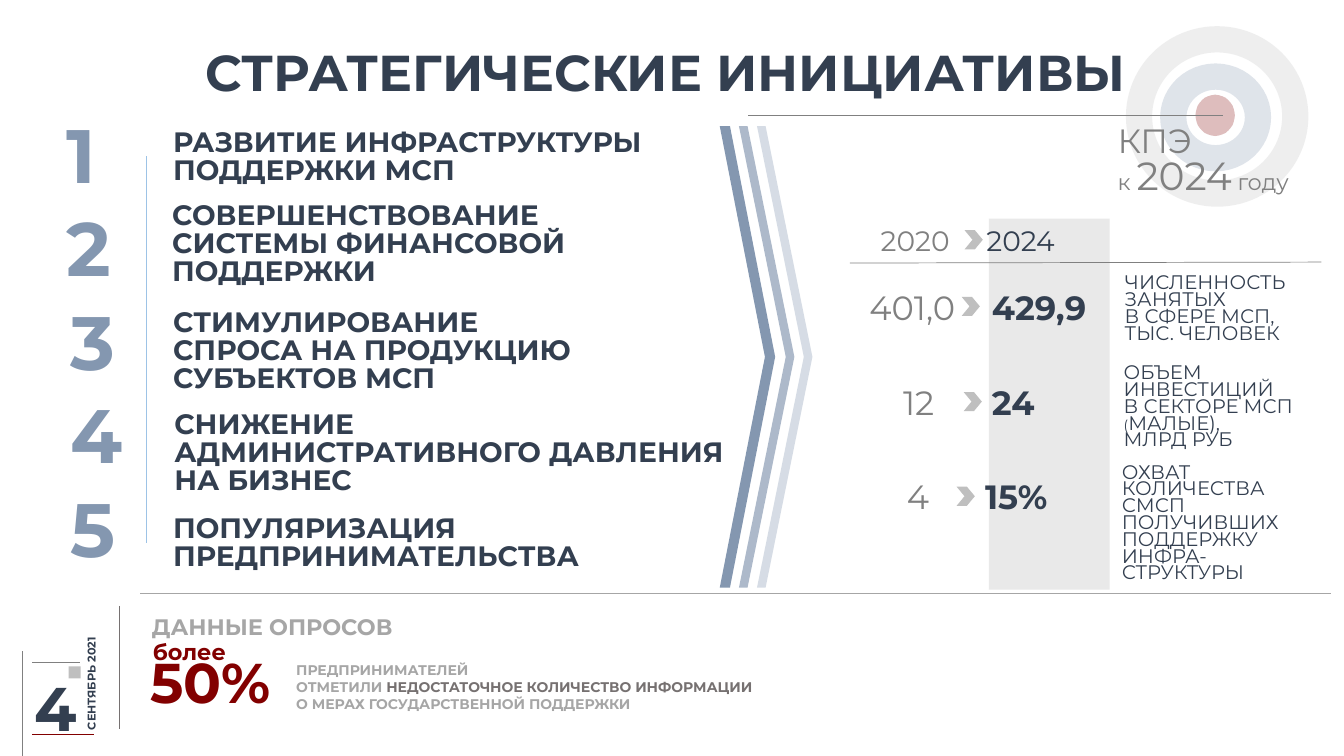
from lxml import etree
from pptx import Presentation
from pptx.dml.color import RGBColor
from pptx.enum.shapes import MSO_CONNECTOR, MSO_SHAPE
from pptx.enum.text import MSO_ANCHOR
from pptx.oxml.ns import qn
from pptx.util import Pt

TOP, MIDDLE = MSO_ANCHOR.TOP, MSO_ANCHOR.MIDDLE
RECT, OVAL, CHEVRON = MSO_SHAPE.RECTANGLE, MSO_SHAPE.OVAL, MSO_SHAPE.CHEVRON
STRAIGHT = MSO_CONNECTOR.STRAIGHT
NAVY, BLUE, GRAY, LIGHT, DARK, RED = "333F50", "8497B0", "808080", "A6A6A6", "767171", "820000"
rgb = RGBColor.from_string

prs = Presentation()
prs.slide_width, prs.slide_height = Pt(960), Pt(540)
s = prs.slides.add_slide(prs.slide_layouts[6])


def add_text(box, paragraphs, size, color, bold=False, spacing=None, anchor=MIDDLE):
    sp = s.shapes.add_textbox(*[Pt(v) for v in box])
    tf = sp.text_frame
    tf.word_wrap = True
    tf.vertical_anchor = anchor
    for i, runs in enumerate(paragraphs):
        p = tf.paragraphs[0] if i == 0 else tf.add_paragraph()
        if spacing:
            p.line_spacing = Pt(spacing)
        for words, changes in runs:
            for j, line in enumerate(words.split("\n")):
                if j:
                    p.add_line_break()
                r = p.add_run()
                r.text = line
                look = {"name": "Montserrat", "size": Pt(size), "bold": bold}
                look.update(changes)
                r.font.color.rgb = rgb(look.pop("color", color))
                for name, value in look.items():
                    setattr(r.font, name, value)
    return sp


def add_figure(kind, box, fill=None, ring=None, alpha=None, adj=None):
    sp = s.shapes.add_shape(kind, *[Pt(v) for v in box])
    sp.shadow.inherit = False
    if fill:
        sp.fill.solid()
        sp.fill.fore_color.rgb = rgb(fill)
        sp.line.fill.background()
    else:
        sp.fill.background()
        sp.line.color.rgb = rgb(ring)
        sp.line.width = Pt(18.75)
    if adj:
        sp.adjustments[0] = adj
    if alpha:
        for clr in sp._element.spPr.iter(qn("a:srgbClr")):
            etree.SubElement(clr, qn("a:alpha")).set("val", str(alpha * 1000))


add_figure(RECT, (706.3, 156.2, 86.4, 265), "D9D9D9", alpha=57)
add_figure(RECT, (49, 475.9, 8.6, 8.6), "BFBFBF")

for x, fill, adj in [(514.1, BLUE, 0.816), (527.8, "ADB9CA", 0.845), (540.7, "D6DCE5", 0.845)]:
    add_figure(CHEVRON, (x, 90, 39.6, 329.8), fill, adj=adj)

for box, color in [
    ((813.6, 28.1, 111.6, 110.2), "BFBFBF"),
    ((838.1, 54.7, 60.5, 58.3), BLUE),
    ((863.3, 77, 9.4, 10.8), RED),
]:
    add_figure(OVAL, box, ring=color, alpha=26)

for x1, y1, x2, y2, color in [
    (15.8, 465.1, 15.8, 540, GRAY),
    (56.9, 473, 23, 473, GRAY),
    (67, 524.9, 23, 524.9, RED),
    (104.4, 111.6, 104.4, 388.1, "9DC3E6"),
    (950.4, 424.1, 100.1, 424.1, LIGHT),
    (85, 432.7, 85, 520.6, DARK),
    (873.4, 82.1, 534.2, 82.1, GRAY),
    (943.9, 187.2, 607, 187.9, GRAY),
]:
    rule = s.shapes.add_connector(STRAIGHT, Pt(x1), Pt(y1), Pt(x2), Pt(y2))
    rule.line.color.rgb = rgb(color)
    rule.line.width = Pt(0.5)
    etree.SubElement(rule._element.spPr, qn("a:effectLst"))

add_text((139.7, 25.2, 733.7, 51.8), [[("СТРАТЕГИЧЕСКИЕ ИНИЦИАТИВЫ", {})]], 36, NAVY, True)

initiatives = [
    (116.6, 97.2, 440.6, "РАЗВИТИЕ ИНФРАСТРУКТУРЫ\nПОДДЕРЖКИ МСП"),
    (115.9, 159.8, 353.5, "СОВЕРШЕНСТВОВАНИЕ\nСИСТЕМЫ ФИНАНСОВОЙ\nПОДДЕРЖКИ"),
    (116.6, 236.2, 324.7, "СТИМУЛИРОВАНИЕ\nСПРОСА НА ПРОДУКЦИЮ\nСУБЪЕКТОВ МСП"),
    (117.4, 308.9, 409.7, "СНИЖЕНИЕ\nАДМИНИСТРАТИВНОГО ДАВЛЕНИЯ\nНА БИЗНЕС"),
    (116.6, 373, 324, "ПОПУЛЯРИЗАЦИЯ\nПРЕДПРИНИМАТЕЛЬСТВА"),
]
for i, (x, y, w, words) in enumerate(initiatives):
    number_x = 40.3 if i < 2 else 43
    add_text((number_x, 89.3 + 66.8 * i, 65.5, 72.7), [[(str(i + 1), {})]], 54, BLUE, True, 32)
    add_text((x, y, w, 31), [[(words, {})]], 20, NAVY, True, 20)

add_text((791.3, 82.1, 72, 36), [[("КПЭ", {})]], 24, GRAY, anchor=TOP)
add_text((791.3, 104.4, 156.2, 41), [[("к ", {}), ("2024", {"size": Pt(28)}), (" году", {})]],
         16, GRAY, anchor=TOP)

for before, after, x1, x2, middle, arrow_x, size, bold in [
    ("2020", "2024", 622, 697.5, 171.4, 689, 20, False),
    ("401,0", "429,9", 614, 701.5, 219, 686.9, 24, True),
    ("12", "24", 638, 701.5, 287, 688.3, 24, True),
    ("4", "15%", 640.8, 696.5, 354.6, 683.3, 24, True),
]:
    add_text((x1, middle - 20, 78, 40), [[(before, {})]], size, GRAY)
    add_text((x2, middle - 20, 90, 40), [[(after, {})]], size, NAVY, bold)
    add_figure(CHEVRON, (arrow_x, middle - 7, 13, 13.7), "BFBFBF", adj=0.434)

for box, paragraphs in [
    ((796.3, 194.4, 151.9, 67.7),
     [[("ЧИСЛЕННОСТЬ\nЗАНЯТЫХ", {})], [("В СФЕРЕ МСП,\nТЫС. ЧЕЛОВЕК", {})]]),
    ((795.6, 258.5, 155.5, 79.9),
     [[("ОБЪЕМ\nИНВЕСТИЦИЙ", {})],
      [("В СЕКТОРЕ МСП\n", {}), ("(", {"size": Pt(10)}), ("МАЛЫЕ),", {})],
      [("МЛРД РУБ", {})]]),
    ((794.2, 329.5, 149.8, 92.4),
     [[("ОХВАТ\nКОЛИЧЕСТВА\nСМСП\nПОЛУЧИВШИХ\nПОДДЕРЖКУ\nИНФРА-\nСТРУКТУРЫ", {})]]),
]:
    add_text(box, paragraphs, 14, NAVY, spacing=12, anchor=TOP)

add_text((101.5, 426.2, 580.3, 29.5), [[("ДАННЫЕ ОПРОСОВ", {})]], 16, LIGHT, True, 32)
add_text((102.2, 444.2, 132.5, 30.2), [[("более", {})]], 16, RED, True, 32)
add_text((100.1, 457.9, 216, 72.7), [[("50%", {})]], 40, RED, True, 32)
add_text((204.5, 465.8, 382.3, 49.7), [
    [("ПРЕДПРИНИМАТЕЛЕЙ", {})],
    [("ОТМЕТИЛИ ", {}), ("НЕДОСТАТОЧНОЕ КОЛИЧЕСТВО ИНФОРМАЦИИ", {"color": DARK})],
    [("О МЕРАХ ГОСУДАРСТВЕННОЙ ПОДДЕРЖКИ", {})],
], 10, LIGHT, True, 12)

date = add_text((19.4, 463, 91.4, 39.6), [[("СЕНТЯБРЬ 2021", {})]], 8, NAVY, True)
date.rotation = 270
add_text((17.3, 485.3, 49.7, 39.6), [[("4", {})]], 44, NAVY, True)

prs.save("out.pptx")
